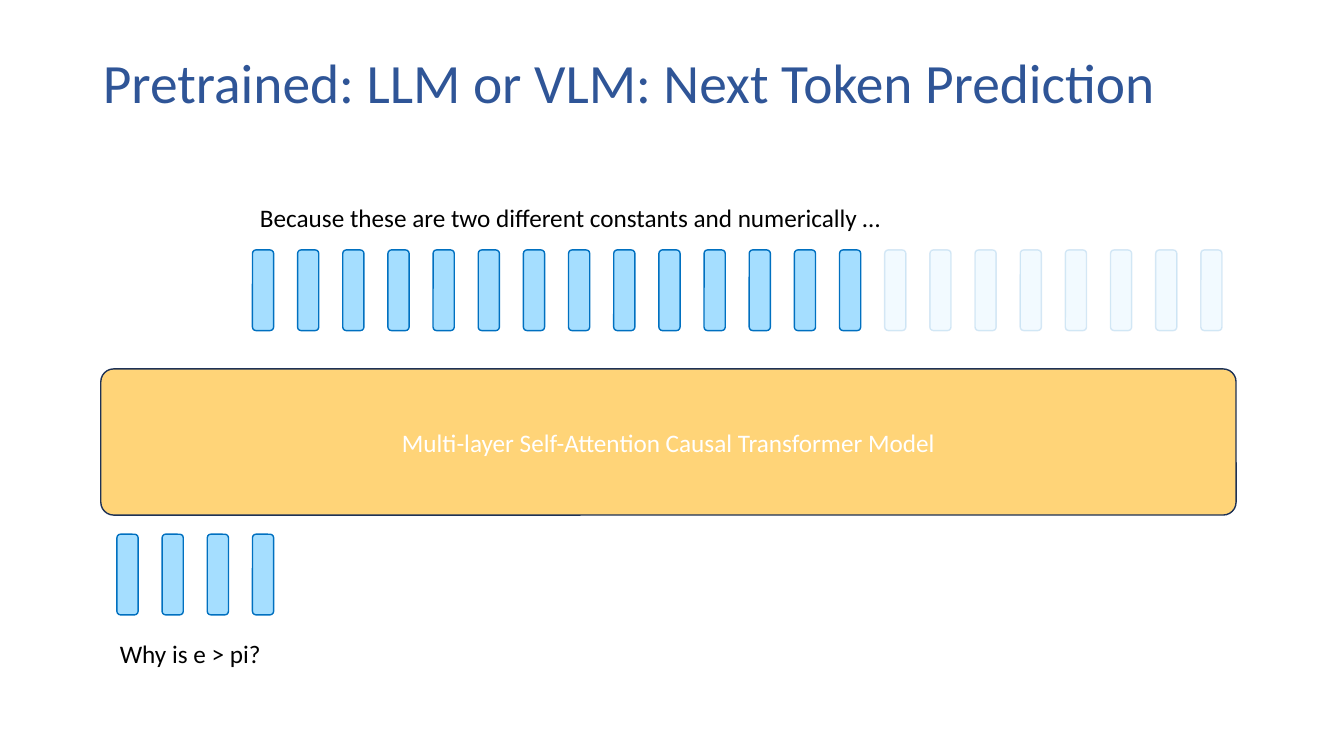
import lxml.etree
import pptx
import pptx.dml.color
import pptx.enum.shapes
import pptx.enum.text
import pptx.oxml.ns
import pptx.util
from pptx.util import Inches

FONT = "Calibri"
FIRST_TOKEN, LAST_TOKEN, STEPS = 1.16, 11.91, 24
PITCH = (LAST_TOKEN - FIRST_TOKEN) / STEPS


def color(hex_value):
    return pptx.dml.color.RGBColor.from_string(hex_value)


def add_block(left, top, width, height, fill, line):
    block = slide.shapes.add_shape(
        pptx.enum.shapes.MSO_SHAPE.ROUNDED_RECTANGLE,
        Inches(left), Inches(top), Inches(width), Inches(height))
    block.shadow.inherit = False
    block.fill.solid()
    block.fill.fore_color.rgb = color(fill)
    block.line.color.rgb = color(line)
    block.line.width = pptx.util.Pt(1)
    return block


deck = pptx.Presentation()
deck.slide_width, deck.slide_height = Inches(13.33), Inches(7.5)
slide = deck.slides.add_slide(deck.slide_layouts[5])

# Title
title = slide.shapes.title
title.left, title.top = Inches(0.92), Inches(0.4)
title.width, title.height = Inches(11.5), Inches(0.9)
title.text_frame.text = "Pretrained: LLM or VLM: Next Token Prediction"
title.text_frame.vertical_anchor = pptx.enum.text.MSO_ANCHOR.MIDDLE
heading = title.text_frame.paragraphs[0]
heading.alignment = pptx.enum.text.PP_ALIGN.LEFT
heading.line_spacing = 0.9
heading.font.name = FONT
heading.font.size = pptx.util.Pt(39.6)
heading.font.color.rgb = color("2F5597")

# Transformer model
model = add_block(1, 3.66, 11.26, 1.45, "FFD478", "1E3256")
model.adjustments[0] = 0.088
model.text_frame.text = "Multi-layer Self-Attention Causal Transformer Model"
model.text_frame.vertical_anchor = pptx.enum.text.MSO_ANCHOR.MIDDLE
model_label = model.text_frame.paragraphs[0]
model_label.alignment = pptx.enum.text.PP_ALIGN.CENTER
model_label.font.name = FONT
model_label.font.size = pptx.util.Pt(18)
model_label.font.color.rgb = color("FFFFFF")

# Token rows: top, first column, token count, faded from this column on
for top, first, count, faded_from in [(5.3, 0, 4, 4), (2.48, 3, 22, 17)]:
    for column in range(first, first + count):
        token = add_block(FIRST_TOKEN + column * PITCH, top, 0.21, 0.8,
                          "A5DEFF", "0070C0")
        if column >= faded_from:
            # Tokens still to be predicted are mostly transparent
            for tint in list(token.element.spPr.iter(pptx.oxml.ns.qn("a:srgbClr"))):
                lxml.etree.SubElement(tint, pptx.oxml.ns.qn("a:alpha"), val="14000")

# Prompt and generated answer
for wording, left, top, width in [
        ("Why is e > pi?", 1.09, 6.28, 1.73),
        ("Because these are two different constants and numerically …",
         2.48, 1.96, 6.45)]:
    caption = slide.shapes.add_textbox(
        Inches(left), Inches(top), Inches(width), Inches(0.4))
    caption.text_frame.text = wording
    caption.text_frame.word_wrap = False
    caption.text_frame.auto_size = pptx.enum.text.MSO_AUTO_SIZE.SHAPE_TO_FIT_TEXT
    sentence = caption.text_frame.paragraphs[0]
    sentence.font.name = FONT
    sentence.font.size = pptx.util.Pt(18)
    sentence.font.color.rgb = color("000000")

deck.save("out.pptx")
